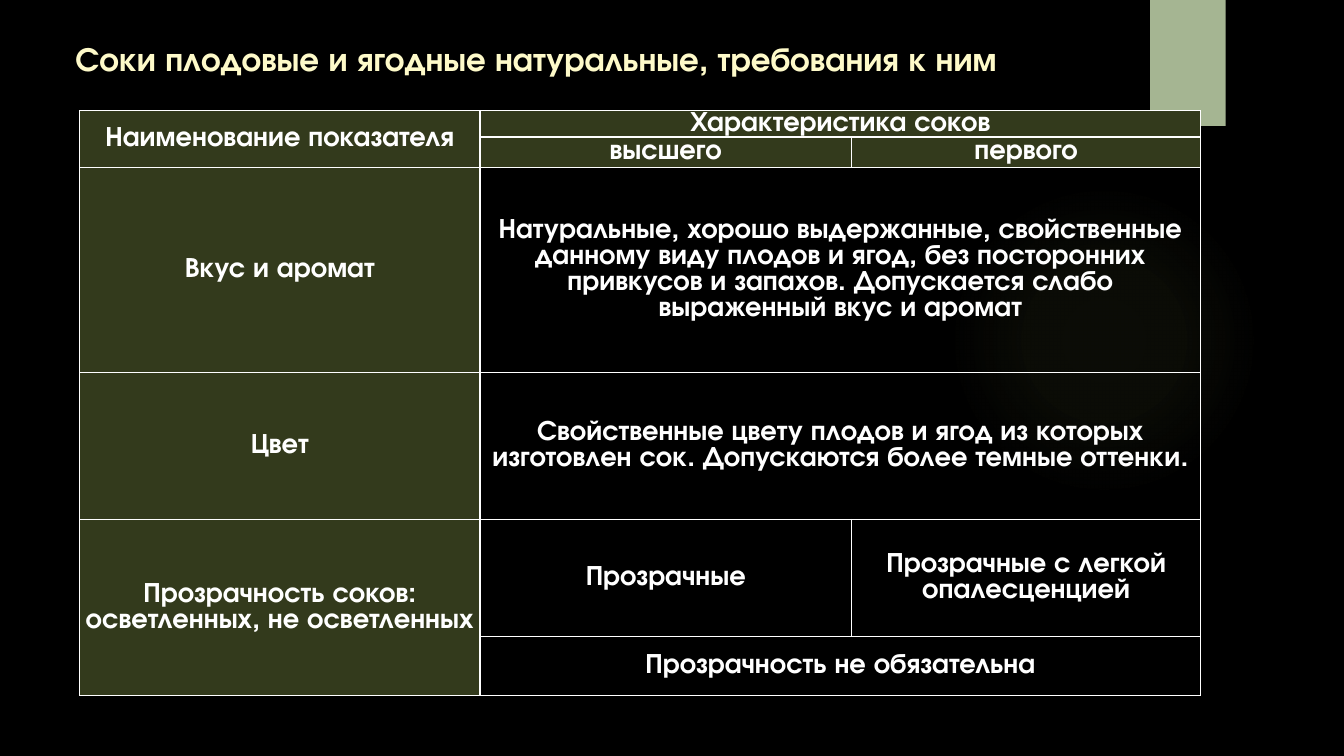
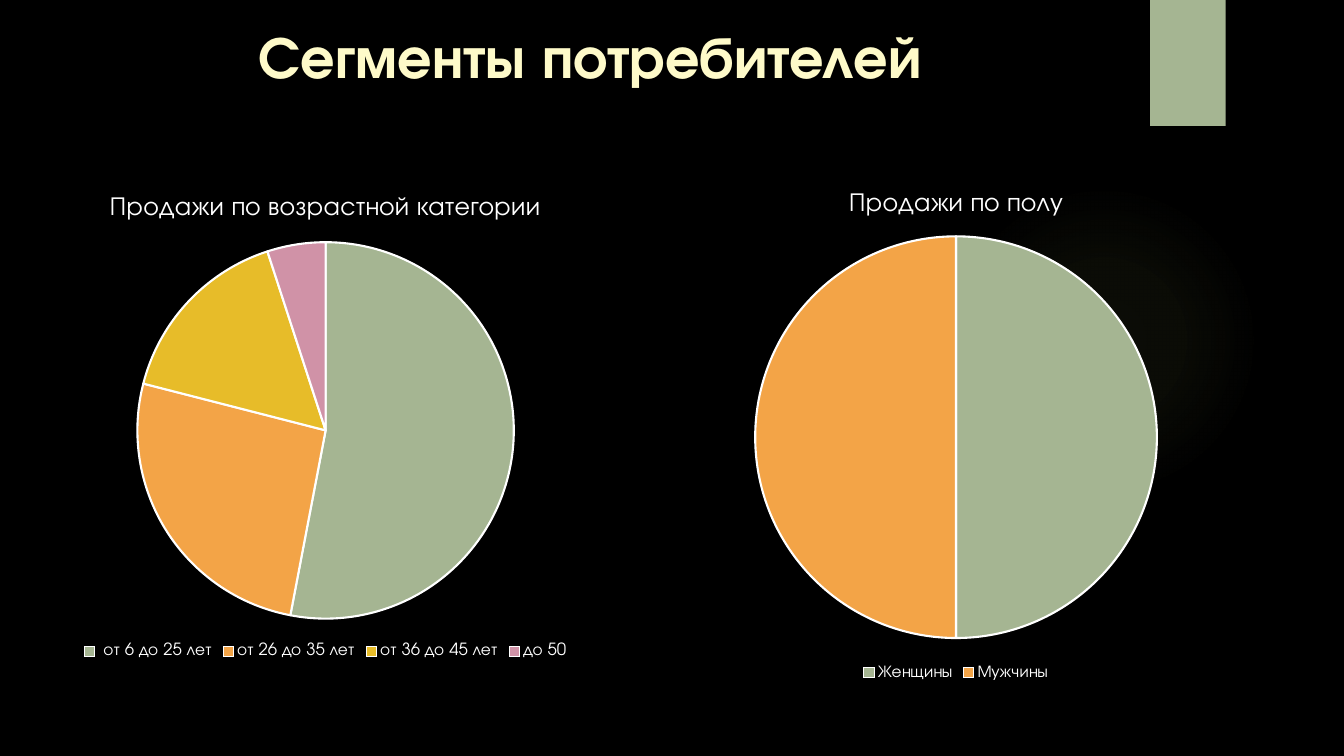
from pptx import Presentation
from pptx.chart.data import CategoryChartData
from pptx.dml.color import RGBColor
from pptx.enum.chart import XL_CHART_TYPE, XL_LEGEND_POSITION
from pptx.enum.shapes import MSO_SHAPE
from pptx.enum.text import MSO_ANCHOR, PP_ALIGN
from pptx.oxml import parse_xml
from pptx.oxml.ns import nsdecls, qn
from pptx.util import Pt

FONT = "TeX Gyre Adventor"
COLORS = {
    "background": "000000", "text": "FFFFFF", "title": "FEFAC9",
    "header": "333A1C", "glow": "9EB160", "sage": "A5B592",
    "orange": "F3A447", "yellow": "E7BC29", "pink": "D092A7",
}
SLICES = ["sage", "orange", "yellow", "pink"]


def style(font, size, color="text", bold=False):
    font.name, font.size, font.bold = FONT, Pt(size), bold
    font.color.rgb = RGBColor.from_string(COLORS[color])


def add_slide(title, box, size, align):
    s = prs.slides.add_slide(prs.slide_layouts[6])
    glow = s.shapes.add_shape(MSO_SHAPE.OVAL, Pt(677.5), Pt(131.8), Pt(221.8), Pt(221.8))
    stops = "".join(
        f'<a:gs pos="{pos}000"><a:srgbClr val="{COLORS["glow"]}">'
        f'<a:alpha val="{alpha}000"/></a:srgbClr></a:gs>'
        for pos, alpha in [(0, 7), (36, 6), (69, 0), (100, 0)])
    glow.element.spPr.insert(2, parse_xml(
        f'<a:gradFill {nsdecls("a")}><a:gsLst>{stops}</a:gsLst><a:path path="circle">'
        '<a:fillToRect l="50000" t="50000" r="50000" b="50000"/></a:path></a:gradFill>'))
    tab = s.shapes.add_shape(MSO_SHAPE.RECTANGLE, Pt(821.5), 0, Pt(54), Pt(90))
    tab.fill.solid()
    tab.fill.fore_color.rgb = RGBColor.from_string(COLORS["sage"])
    for sp in (glow, tab):
        sp.line.fill.background()
        sp.shadow.inherit = False
    tf = s.shapes.add_textbox(*map(Pt, box)).text_frame
    tf.word_wrap = True
    tf.text = title
    p = tf.paragraphs[0]
    p.alignment = align
    style(p.runs[0].font, size, "title", True)
    return s


prs = Presentation()
prs.slide_width, prs.slide_height = Pt(960), Pt(540)
bg = prs.slide_master.background.fill
bg.solid()
bg.fore_color.rgb = RGBColor.from_string(COLORS["background"])

s = add_slide("Соки плодовые и ягодные натуральные, требования к ним",
              (46.8, 23.8, 761, 55.4), 24, PP_ALIGN.LEFT)
widths = [285.8, 265.5, 249.5]
heights = [18.7, 21.6, 146.6, 105, 83.6, 42]
rows = [
    ["Наименование показателя", "Характеристика соков", ""],
    ["", "высшего", "первого"],
    ["Вкус и аромат",
     "Натуральные, хорошо выдержанные, свойственные данному виду плодов и ягод, "
     "без посторонних привкусов и запахов. Допускается слабо выраженный вкус и аромат", ""],
    ["Цвет",
     "Свойственные цвету плодов и ягод из которых изготовлен сок. "
     "Допускаются более темные оттенки.", ""],
    ["Прозрачность соков: осветленных, не осветленных", "Прозрачные",
     "Прозрачные с легкой опалесценцией"],
    ["", "Прозрачность не обязательна", ""],
]
table = s.shapes.add_table(len(rows), len(widths), Pt(57), Pt(79.2),
                           Pt(sum(widths)), Pt(sum(heights))).table
table.first_row = table.horz_banding = False
for col, width in zip(table.columns, widths):
    col.width = Pt(width)
for row, height in zip(table.rows, heights):
    row.height = Pt(height)
for top, left, bottom, right in [(0, 0, 1, 0), (4, 0, 5, 0), (0, 1, 0, 2),
                                 (2, 1, 2, 2), (3, 1, 3, 2), (5, 1, 5, 2)]:
    table.cell(top, left).merge(table.cell(bottom, right))
for i, texts in enumerate(rows):
    for j, text in enumerate(texts):
        cell = table.cell(i, j)
        cell.margin_left = cell.margin_right = cell.margin_top = cell.margin_bottom = 0
        cell.vertical_anchor = MSO_ANCHOR.MIDDLE
        cell.text_frame.text = text
        p = cell.text_frame.paragraphs[0]
        p.alignment = PP_ALIGN.CENTER
        p.line_spacing = Pt(18.6)
        style(p.font, 20, bold=True)
        for r in p.runs:
            style(r.font, 20, bold=True)
        if i < 2 or j == 0:
            cell.fill.solid()
            cell.fill.fore_color.rgb = RGBColor.from_string(COLORS["header"])
        else:
            cell.fill.background()
        tcPr = cell._tc.get_or_add_tcPr()
        for k, side in enumerate(["lnL", "lnR", "lnT", "lnB"]):
            tcPr.insert(k, parse_xml(
                f'<a:{side} {nsdecls("a")} w="12700"><a:solidFill>'
                f'<a:srgbClr val="{COLORS["text"]}"/></a:solidFill></a:{side}>'))

s = add_slide("Сегменты потребителей", (51.1, 10.8, 740.9, 110.2), 42, PP_ALIGN.CENTER)
pies = [
    ("Продажи по возрастной категории", "Series 1", (-47.5, 123.8, 560.2, 349.9),
     {" от 6 до 25 лет": 53, "от 26 до 35 лет": 26, "от 36 до 45 лет": 16, "до 50": 5},
     {"x": 0.26, "y": 0.14, "w": 0.48, "h": 0.77}),
    ("Продажи по полу", "Продажи по полу", (416.9, 121, 532.1, 367.9),
     {"Женщины": 50, "Мужчины": 50},
     {"x": 0.23, "y": 0.13, "w": 0.54, "h": 0.78}),
]
for title, name, box, values, area in pies:
    data = CategoryChartData()
    data.categories = list(values)
    data.add_series(name, list(values.values()))
    chart = s.shapes.add_chart(XL_CHART_TYPE.PIE, *map(Pt, box), data).chart
    style(chart.font, 10)
    chart.has_title = True
    tf = chart.chart_title.text_frame
    tf.text = title
    style(tf.paragraphs[0].runs[0].font, 18.6)
    chart.chart_title.include_in_layout = False
    chart.has_legend = True
    chart.legend.position = XL_LEGEND_POSITION.BOTTOM
    chart.legend.include_in_layout = False
    style(chart.legend.font, 12)
    plot = chart.plots[0]
    plot.vary_by_categories = True
    for i, color in enumerate(SLICES[:len(values)]):
        fmt = plot.series[0].points[i].format
        fmt.fill.solid()
        fmt.fill.fore_color.rgb = RGBColor.from_string(COLORS[color])
        fmt.line.color.rgb = RGBColor.from_string(COLORS["text"])
        fmt.line.width = Pt(1.5)
    root = chart.element
    root.find(qn("c:chart")).addnext(parse_xml(
        f'<c:spPr {nsdecls("c", "a")}><a:noFill/><a:ln><a:noFill/></a:ln></c:spPr>'))
    plot_area = root.find(".//" + qn("c:plotArea"))
    for layout in plot_area.findall(qn("c:layout")):
        plot_area.remove(layout)
    sizes = "".join(f'<c:{key} val="{val}"/>' for key, val in area.items())
    plot_area.insert(0, parse_xml(
        f'<c:layout {nsdecls("c")}><c:manualLayout><c:layoutTarget val="inner"/>'
        f'<c:xMode val="edge"/><c:yMode val="edge"/>{sizes}</c:manualLayout></c:layout>'))

prs.save("out.pptx")
